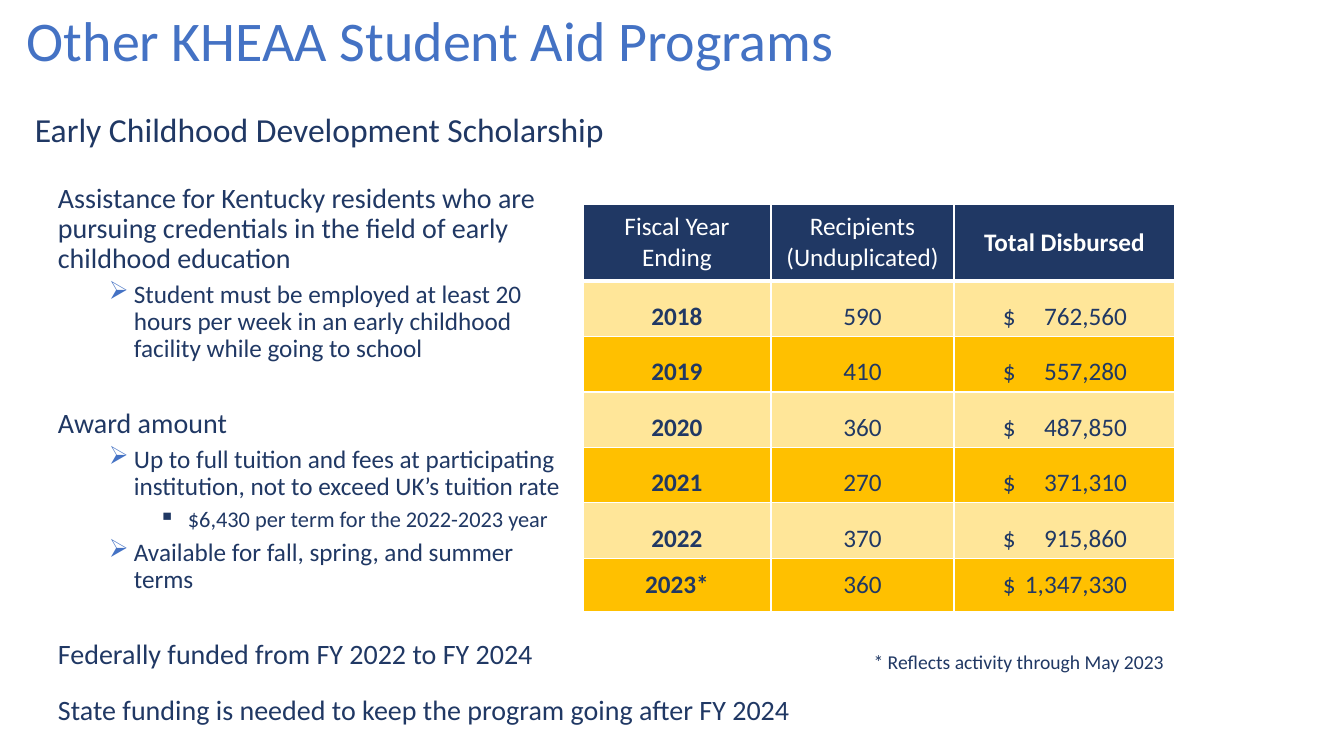
import pptx
import pptx.util
import pptx.dml.color
import pptx.enum.text
import pptx.oxml
import pptx.oxml.ns

PX = 9071.43  # EMU per px, at 100.8 px to the inch
COLORS = {"navy": "203864", "blue": "4472C4", "white": "FFFFFF",
          "cream": "FFE699", "gold": "FFC000"}
ALIGN = pptx.enum.text.PP_ALIGN
ANCHOR = pptx.enum.text.MSO_ANCHOR
DRAWING = pptx.oxml.ns.nsdecls("a")


def style(paragraph, size, color="navy", bold=False, align=ALIGN.LEFT, spacing=1.0):
    paragraph.alignment = align
    paragraph.line_spacing = spacing
    for run in paragraph.runs:
        run.font.name = "Calibri"
        run.font.size = pptx.util.Pt(size)
        run.font.bold = bold
        run.font.color.rgb = pptx.dml.color.RGBColor.from_string(COLORS[color])


def add_text(left, top, width, height, text):
    box = slide.shapes.add_textbox(*(round(v * PX) for v in (left, top, width, height)))
    box.text_frame.word_wrap = True
    box.text_frame.text = text
    return box.text_frame


presentation = pptx.Presentation()
presentation.slide_width = round(1344 * PX)
presentation.slide_height = round(756 * PX)
slide = presentation.slides.add_slide(presentation.slide_layouts[6])

# Title and subtitle
title = add_text(17, 8, 1142, 109, "Other KHEAA Student Aid Programs")
style(title.paragraphs[0], 40, "blue", spacing=0.9)
subtitle = add_text(25, 104, 1287, 50, "Early Childhood Development Scholarship")
subtitle.vertical_anchor = ANCHOR.MIDDLE
style(subtitle.paragraphs[0], 24)

# Program details: level, space before in points, text
details = [
    (0, 0, "Assistance for Kentucky residents who are pursuing credentials "
           "in the field of early childhood education"),
    (1, 5, "Student must be employed at least 20 hours per week in an early "
           "childhood facility while going to school"),
    (0, 33, "Award amount"),
    (1, 5, "Up to full tuition and fees at participating institution, "
           "not to exceed UK’s tuition rate"),
    (2, 5, "$6,430 per term for the 2022-2023 year"),
    (1, 5, "Available for fall, spring, and summer terms"),
    (0, 33, "Federally funded from FY 2022 to FY 2024"),
]
sizes = [20, 18, 16]
bullets = {1: ("➢", "blue", 76, -25), 2: ("▪", "navy", 130, -29)}
body = add_text(48, 179, 531, 500, "\n".join(text for _, _, text in details))
for paragraph, (level, before, _) in zip(body.paragraphs, details):
    paragraph.level = level
    paragraph.space_before = pptx.util.Pt(before)
    style(paragraph, sizes[level], spacing=0.9)
    if level:
        mark, color, margin, indent = bullets[level]
        properties = paragraph._p.get_or_add_pPr()
        properties.set("marL", str(round(margin * PX)))
        properties.set("indent", str(round(indent * PX)))
        for xml in (f'<a:buClr {DRAWING}><a:srgbClr val="{COLORS[color]}"/></a:buClr>',
                    f'<a:buChar {DRAWING} char="{mark}"/>'):
            properties.append(pptx.oxml.parse_xml(xml))

# Disbursement table
rows = [
    ("Fiscal Year Ending", "Recipients\n(Unduplicated)", "Total Disbursed"),
    ("2018", "590", "$\t762,560"),
    ("2019", "410", "$\t557,280"),
    ("2020", "360", "$\t487,850"),
    ("2021", "270", "$\t371,310"),
    ("2022", "370", "$\t915,860"),
    ("2023*", "360", "$\t1,347,330"),
]
widths = [188, 183, 221]
heights = [77] + [52] * 5 + [53]
table = slide.shapes.add_table(
    len(rows), len(widths), round(583 * PX), round(204 * PX),
    round(sum(widths) * PX), round(sum(heights) * PX)).table
table.horz_banding = False
for column, width in zip(table.columns, widths):
    column.width = round(width * PX)
for row, height in zip(table.rows, heights):
    row.height = round(height * PX)

for r, row in enumerate(rows):
    header, last = r == 0, r == len(rows) - 1
    fill = "navy" if header else ("gold", "cream")[r % 2]
    for c, text in enumerate(row):
        cell = table.cell(r, c)
        cell.text = text
        cell.vertical_anchor = ANCHOR.MIDDLE
        amount = c == 2 and not header
        bold = c == 2 if header else c == 0
        for paragraph in cell.text_frame.paragraphs:
            if amount:  # dollar sign on the left, figure against a right tab
                cell.margin_left = round(49 * PX)
                paragraph._p.get_or_add_pPr().append(pptx.oxml.parse_xml(
                    f'<a:tabLst {DRAWING}><a:tab pos="{round(124 * PX)}" algn="r"/></a:tabLst>'))
            style(paragraph, 18, "white" if header else "navy", bold,
                  ALIGN.LEFT if amount else ALIGN.CENTER,
                  1.0 if header or last else 1.5)
        # White borders, heavier under the header
        borders = {"lnL": 1, "lnR": 1, "lnT": 1, "lnB": 3 if header else 1}
        if r == 1:
            borders["lnT"] = 3
        for side, points in borders.items():
            cell._tc.get_or_add_tcPr().append(pptx.oxml.parse_xml(
                f'<a:{side} {DRAWING} w="{points * 12700}"><a:solidFill>'
                f'<a:srgbClr val="{COLORS["white"]}"/></a:solidFill></a:{side}>'))
        cell.fill.solid()
        cell.fill.fore_color.rgb = pptx.dml.color.RGBColor.from_string(COLORS[fill])

# Footnote and closing statement
footnote = add_text(696, 645, 478, 34, "* Reflects activity through May 2023")
style(footnote.paragraphs[0], 14, align=ALIGN.RIGHT)
closing = add_text(48, 647, 787, 69,
                   "State funding is needed to keep the program going after FY 2024")
closing.margin_top = round(49 * PX)
style(closing.paragraphs[0], 20, spacing=0.9)

presentation.save("out.pptx")
